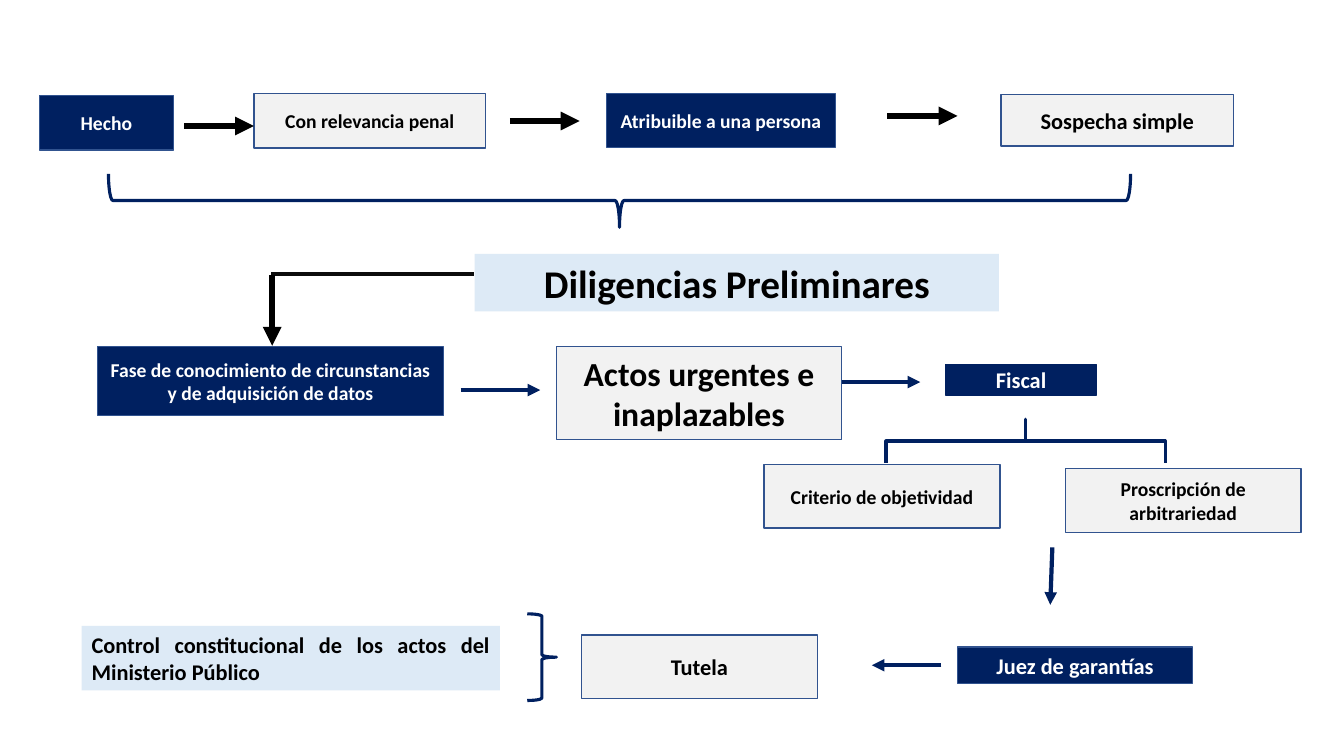
from lxml import etree
from pptx import Presentation
from pptx.dml.color import RGBColor
from pptx.enum import shapes, text
from pptx.oxml import ns
from pptx.util import Pt

NAVY = RGBColor(0x00, 0x20, 0x60)
EDGE = RGBColor(0x31, 0x53, 0x8F)
GREY = RGBColor(0xF2, 0xF2, 0xF2)
PALE = RGBColor(0xDD, 0xEA, 0xF6)
BLACK = RGBColor(0x00, 0x00, 0x00)
SOFT_BLACK = RGBColor(0x0C, 0x0C, 0x0C)
WHITE = RGBColor(0xFF, 0xFF, 0xFF)


def write(shape, wording, size=14, color=BLACK, align=text.PP_ALIGN.CENTER,
          anchor=text.MSO_ANCHOR.MIDDLE):
    frame = shape.text_frame
    frame.word_wrap = True
    frame.auto_size = text.MSO_AUTO_SIZE.NONE
    frame.vertical_anchor = anchor
    frame.margin_left = frame.margin_right = Pt(7.2)
    frame.margin_top = frame.margin_bottom = Pt(3.6)
    paragraph = frame.paragraphs[0]
    paragraph.alignment = align
    run = paragraph.add_run()
    run.text = wording
    run.font.name = "Calibri"
    run.font.size = Pt(size)
    run.font.bold = True
    run.font.color.rgb = color


deck = Presentation()
deck.slide_width, deck.slide_height = Pt(960), Pt(540)
slide = deck.slides.add_slide(deck.slide_layouts[5])

# Central stage, the title of the slide
stage = slide.shapes.title
stage.left, stage.top, stage.width, stage.height = Pt(339.1), Pt(181.4), Pt(374.4), Pt(41)
stage.fill.solid()
stage.fill.fore_color.rgb = PALE
write(stage, "Diligencias Preliminares", size=28, anchor=text.MSO_ANCHOR.TOP)

# Steps: wording, left, top, width, height, fill, edge, text size
steps = [
    ("Hecho", 28.1, 68.4, 95.8, 38.9, NAVY, EDGE, 14),
    ("Con relevancia penal", 181.4, 67, 165.6, 38.9, GREY, EDGE, 14),
    ("Atribuible a una persona", 433.4, 67, 163.4, 38.2, NAVY, EDGE, 14),
    ("Sospecha simple", 715, 67.7, 166.3, 36.7, GREY, EDGE, 16),
    ("Fase de conocimiento de circunstancias y de adquisición de datos",
     69.8, 247.7, 247, 49, NAVY, EDGE, 14),
    ("Actos urgentes e inaplazables", 397.4, 247.7, 203.8, 66.2, GREY, EDGE, 24),
    ("Fiscal", 675.4, 260.6, 108, 21.6, NAVY, NAVY, 16),
    ("Criterio de objetividad", 545.8, 331.9, 168.5, 45.4, GREY, EDGE, 14),
    ("Proscripción de arbitrariedad", 761, 334.8, 168.5, 45.4, GREY, EDGE, 14),
    ("Juez de garantías", 684, 462.2, 167.8, 25.9, NAVY, EDGE, 16),
    ("Tutela", 415.4, 453.6, 168.5, 45.4, GREY, EDGE, 16),
]
for wording, left, top, width, height, fill, edge, size in steps:
    step = slide.shapes.add_shape(shapes.MSO_SHAPE.RECTANGLE,
                                  Pt(left), Pt(top), Pt(width), Pt(height))
    step.shadow.inherit = False
    step.fill.solid()
    step.fill.fore_color.rgb = fill
    step.line.color.rgb = edge
    step.line.width = Pt(1)
    write(step, wording, size=size, color=WHITE if fill == NAVY else BLACK)

# Constitutional control
control = slide.shapes.add_textbox(Pt(58.3), Pt(447.1), Pt(298.8), Pt(46.1))
control.fill.solid()
control.fill.fore_color.rgb = PALE
write(control, "Control constitucional de los actos del Ministerio Público",
      size=16, align=text.PP_ALIGN.JUSTIFY, anchor=text.MSO_ANCHOR.TOP)

# Braces: left, top, width, height, rotation, curl
braces = [
    (423.4, -221.8, 38.2, 730.1, 90, 0.083),
    (717.1, 215.3, 31, 199.4, 270, 0),
    (376.6, 438.5, 20.9, 61.9, 0, 0.083),
]
for left, top, width, height, rotation, curl in braces:
    brace = slide.shapes.add_shape(shapes.MSO_SHAPE.RIGHT_BRACE,
                                   Pt(left), Pt(top), Pt(width), Pt(height))
    brace.shadow.inherit = False
    brace.rotation = rotation
    brace.adjustments[0] = curl
    brace.adjustments[1] = 0.5
    brace.fill.background()
    brace.line.color.rgb = NAVY
    brace.line.width = Pt(2.25)

# Links: from x, y, to x, y, colour, width, arrowhead
links = [
    (131.8, 90, 181.4, 90, BLACK, 4.5, True),
    (364.3, 86.4, 414, 86.4, BLACK, 4.5, True),
    (633.6, 82.8, 684, 82.8, BLACK, 4.5, True),
    (193.7, 195.8, 338.4, 195.8, SOFT_BLACK, 3, False),
    (194.4, 196.6, 194.4, 247, BLACK, 4.5, True),
    (329, 278.6, 385.9, 278.6, NAVY, 3, True),
    (601.2, 272.9, 657.4, 272.9, NAVY, 3, True),
    (751.7, 391, 750.2, 432, NAVY, 3, True),
    (672.5, 475.2, 622.8, 475.2, NAVY, 3, True),
]
for x1, y1, x2, y2, color, width, has_head in links:
    link = slide.shapes.add_connector(shapes.MSO_CONNECTOR.STRAIGHT,
                                      Pt(x1), Pt(y1), Pt(x2), Pt(y2))
    link.line.color.rgb = color
    link.line.width = Pt(width)
    if has_head:
        etree.SubElement(link.line._get_or_add_ln(), ns.qn("a:tailEnd"), type="triangle")
    etree.SubElement(link._element.spPr, ns.qn("a:effectLst"))

deck.save("out.pptx")
